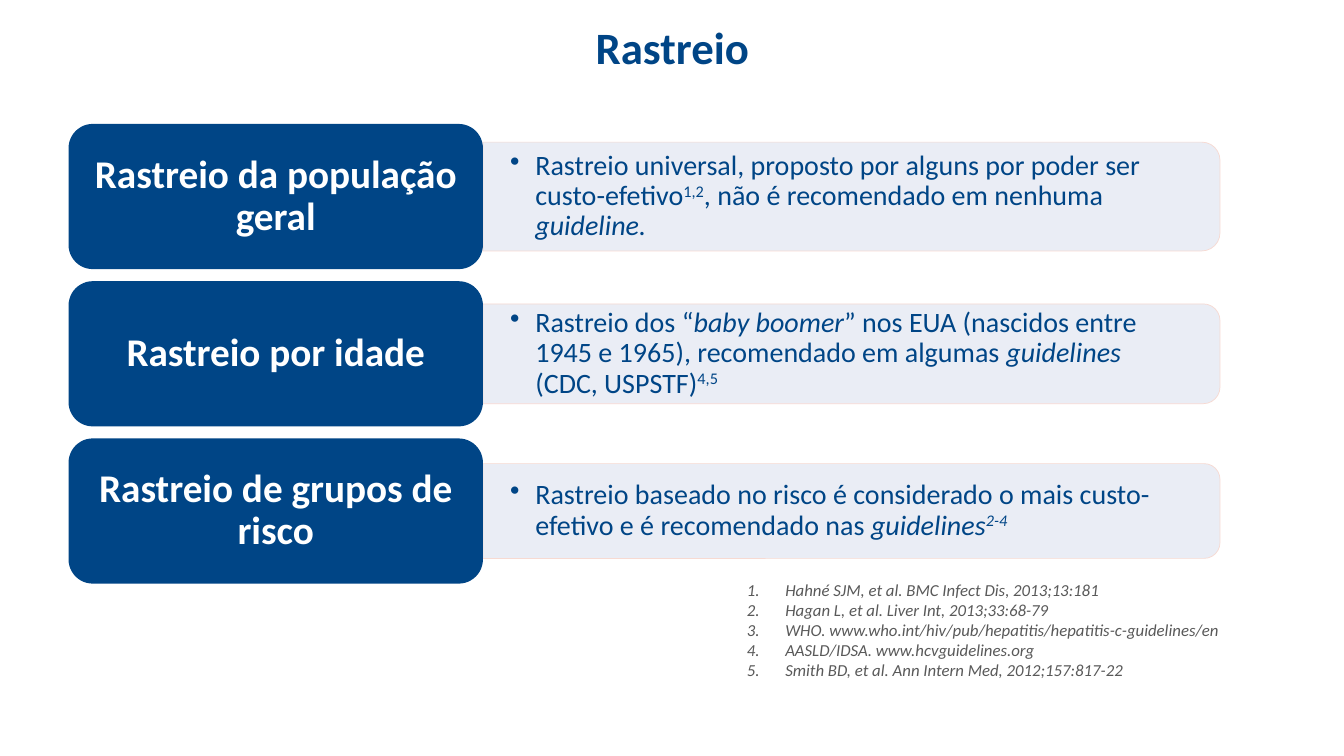
from pptx import Presentation
from pptx.dml.color import RGBColor
from pptx.enum.shapes import MSO_SHAPE
from pptx.enum.text import MSO_ANCHOR, PP_ALIGN
from pptx.oxml.ns import qn
from pptx.util import Inches, Pt
from lxml import etree

ROUND = MSO_SHAPE.ROUNDED_RECTANGLE
ROUND_TOP = MSO_SHAPE.ROUND_2_SAME_RECTANGLE
MIDDLE = MSO_ANCHOR.MIDDLE
TOP = MSO_ANCHOR.TOP
CENTER = PP_ALIGN.CENTER
FONT = "Calibri"
NAVY, PALE, PINK, WHITE, GRAY = "004586", "E8ECF5", "F8D7CE", "FFFFFF", "595959"

ROWS = [
    ("Rastreio da população geral", 1.08, [
        ("Rastreio universal, proposto por alguns por poder ser custo-efetivo", ""),
        ("1,2", "sup"),
        (", não é recomendado em nenhuma ", ""),
        ("guideline.", "italic")]),
    ("Rastreio por idade", 0.99, [
        ("Rastreio dos “", ""),
        ("baby boomer", "italic"),
        ("” nos EUA (nascidos entre 1945 e 1965), recomendado em algumas ", ""),
        ("guidelines", "italic"),
        (" (CDC, USPSTF)", ""),
        ("4,5", "sup")]),
    ("Rastreio de grupos de risco", 0.94, [
        ("Rastreio baseado no risco é considerado o mais custo-efetivo e é recomendado nas ", ""),
        ("guidelines", "italic"),
        ("2-4", "italic sup")]),
]
REFERENCES = [
    "Hahné SJM, et al. BMC Infect Dis, 2013;13:181",
    "Hagan L, et al. Liver Int, 2013;33:68-79",
    "WHO. www.who.int/hiv/pub/hepatitis/hepatitis-c-guidelines/en",
    "AASLD/IDSA. www.hcvguidelines.org",
    "Smith BD, et al. Ann Intern Med, 2012;157:817-22",
]


def rgb(value):
    return RGBColor.from_string(value)


def set_frame(sp, mx=0.1, my=0.05, anchor=MIDDLE):
    tf = sp.text_frame
    tf.word_wrap = True
    tf.vertical_anchor = anchor
    tf.margin_left = tf.margin_right = Inches(mx)
    tf.margin_top = tf.margin_bottom = Inches(my)
    return tf


def add_box(s, x, y, w, h):
    return s.shapes.add_textbox(Inches(x), Inches(y), Inches(w), Inches(h))


def add_block(s, kind, x, y, w, h, fill):
    sp = s.shapes.add_shape(kind, Inches(x), Inches(y), Inches(w), Inches(h))
    sp.shadow.inherit = False
    sp.fill.solid()
    sp.fill.fore_color.rgb = rgb(fill)
    sp.line.fill.background()
    return sp


def add_run(p, text, size, color, bold=False, italic=False, sup=False):
    r = p.add_run()
    r.text = text
    r.font.name = FONT
    r.font.size = Pt(size)
    r.font.bold = bold
    r.font.italic = italic
    r.font.color.rgb = rgb(color)
    if sup:
        r.font._element.set("baseline", "30000")


def add_bullet(p, indent, tag, **attrs):
    pPr = p._p.get_or_add_pPr()
    pPr.set("marL", str(Inches(indent)))
    pPr.set("indent", str(-Inches(indent)))
    etree.SubElement(pPr, qn(tag), **attrs)


def set_alpha(sp):
    for color in sp._element.spPr.iter(qn("a:srgbClr")):
        etree.SubElement(color, qn("a:alpha"), val="90000")


def add_title(s, x, y, w, h):
    p = set_frame(add_box(s, x, y, w, h)).paragraphs[0]
    p.alignment = CENTER
    p.line_spacing = 0.9
    add_run(p, "Rastreio", 32, NAVY, bold=True)


def add_row(s, x, y, w, h, label, panel_h, runs):
    card_w = 4.11
    panel_x, panel_w = x + card_w, w - card_w
    mid = y + h / 2
    panel = add_block(s, ROUND_TOP, panel_x + (panel_w - panel_h) / 2,
                      mid - panel_w / 2, panel_h, panel_w, PALE)
    panel.rotation = 90
    panel.line.color.rgb = rgb(PINK)
    panel.line.width = Pt(0.5)
    set_alpha(panel)

    body = add_box(s, panel_x, mid - panel_h / 2 + 0.05, panel_w - 0.05, panel_h - 0.1)
    p = set_frame(body, 0.27, 0.14).paragraphs[0]
    p.line_spacing = 0.9
    add_bullet(p, 0.25, "a:buChar", char="•")
    for text, style in runs:
        add_run(p, text, 20, NAVY, italic="italic" in style, sup="sup" in style)

    card = add_block(s, ROUND, x, y, card_w, h, NAVY)
    p = set_frame(card, 0.19, 0.13).paragraphs[0]
    p.alignment = CENTER
    p.line_spacing = 0.9
    add_run(p, label, 28, WHITE, bold=True)


def add_references(s, x, y, w, h):
    tf = set_frame(add_box(s, x, y, w, h), anchor=TOP)
    for i, text in enumerate(REFERENCES):
        p = tf.add_paragraph() if i else tf.paragraphs[0]
        add_bullet(p, 0.38, "a:buAutoNum", type="arabicPeriod")
        add_run(p, text, 12, GRAY, italic=True)


def main():
    prs = Presentation()
    prs.slide_width, prs.slide_height = Inches(13.33), Inches(7.5)
    s = prs.slides.add_slide(prs.slide_layouts[6])
    add_references(s, 7.31, 5.7, 6.02, 1.11)
    for i, row in enumerate(ROWS):
        add_row(s, 0.68, 1.23 + 1.56 * i, 11.42, 1.44, *row)
    add_title(s, 0.67, 0.17, 12, 0.66)
    prs.save("out.pptx")


if __name__ == "__main__":
    main()
